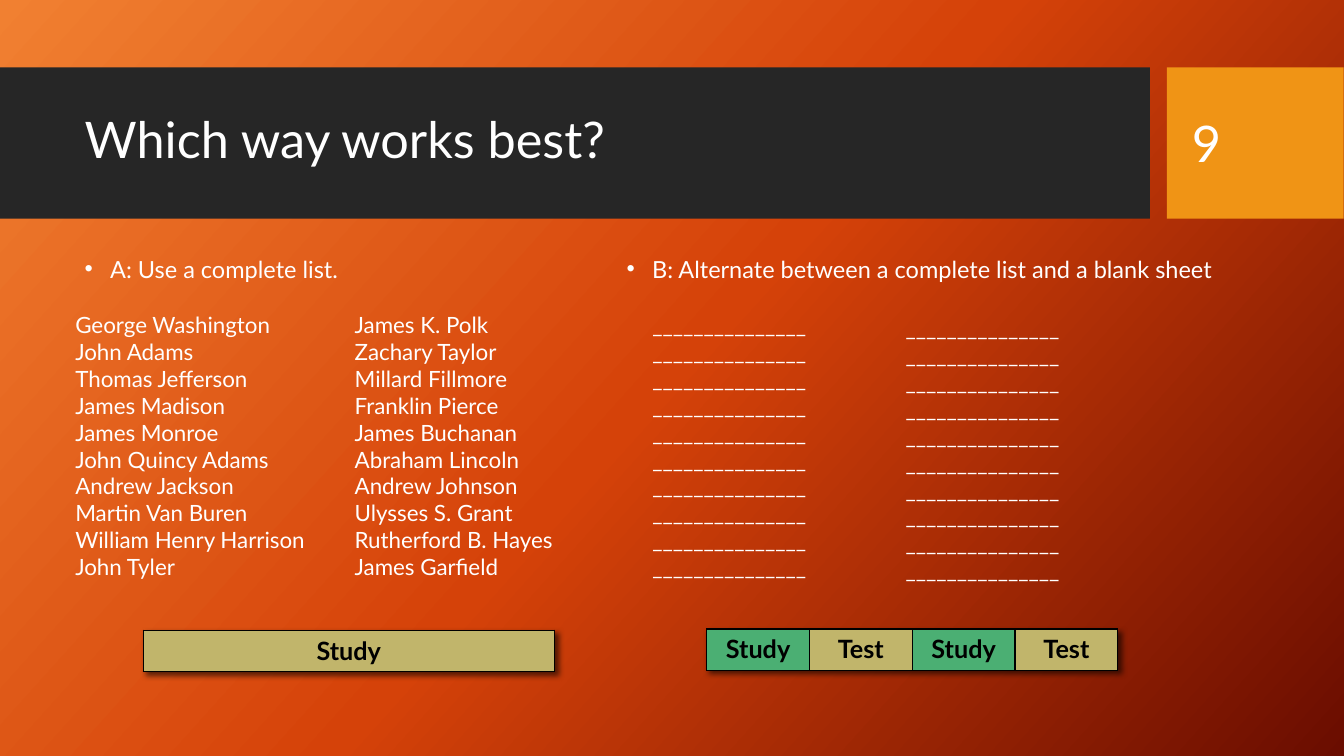
import copy

import pptx
import pptx.dml.color
import pptx.enum.shapes
import pptx.enum.text
import pptx.oxml
import pptx.oxml.ns
import pptx.util
from pptx.util import Cm

COLORS = {
    "text": "FFFFFF", "band": "262626", "number": "F09415", "ink": "000000",
    "study": "4BAF73", "test": "C1B56B",
    "bg_start": "F18031", "bg_middle": "D54209", "bg_end": "6A0D00",
}
NS = 'xmlns:a="http://schemas.openxmlformats.org/drawingml/2006/main"'
ANCHOR = pptx.enum.text.MSO_ANCHOR
AUTO_SIZE = pptx.enum.text.MSO_AUTO_SIZE
ALIGN = pptx.enum.text.PP_ALIGN

EARLY_PRESIDENTS = [
    "George Washington", "John Adams", "Thomas Jefferson", "James Madison",
    "James Monroe", "John Quincy Adams", "Andrew Jackson", "Martin Van Buren",
    "William Henry Harrison", "John Tyler",
]
LATER_PRESIDENTS = [
    "James K. Polk", "Zachary Taylor", "Millard Fillmore", "Franklin Pierce",
    "James Buchanan", "Abraham Lincoln", "Andrew Johnson", "Ulysses S. Grant",
    "Rutherford B. Hayes", "James Garfield",
]
BLANKS = [" " + "_" * 15] * 10


def rgb(name):
    return pptx.dml.color.RGBColor.from_string(COLORS[name])


def xml(text):
    return pptx.oxml.parse_xml(text)


class SlideBuilder:
    font = "Lato"

    def __init__(self, prs):
        self.s = prs.slides.add_slide(prs.slide_layouts[3])

    def background(self, names, angle):
        """Spread the named colours evenly along a clockwise angle."""
        fill = self.s.background.fill
        fill.gradient()
        fill.gradient_angle = 360 - angle
        stops = next(self.s.element.iter(pptx.oxml.ns.qn("a:gsLst")))
        while len(stops) < len(names):
            stops.append(copy.deepcopy(stops[0]))
        for i, (stop, name) in enumerate(zip(fill.gradient_stops, names)):
            stop.color.rgb = rgb(name)
            stop.position = i / (len(names) - 1)

    def place(self, sp, left, top, width, height):
        sp.left, sp.top = Cm(left), Cm(top)
        sp.width, sp.height = Cm(width), Cm(height)

    def run(self, p, text, size, color="text", bold=False):
        r = p.add_run()
        r.text = text
        r.font.name = self.font
        r.font.size = pptx.util.Pt(size)
        r.font.bold = bold
        r.font.color.rgb = rgb(color)

    def bar(self, color, *box):
        sp = self.s.shapes.add_shape(
            pptx.enum.shapes.MSO_SHAPE.RECTANGLE, *map(Cm, box))
        sp.shadow.inherit = False
        sp.fill.solid()
        sp.fill.fore_color.rgb = rgb(color)
        sp.line.fill.background()

    def title(self, text, *box):
        sp = self.s.shapes.title
        self.place(sp, *box)
        tf = sp.text_frame
        tf.auto_size = AUTO_SIZE.NONE
        tf.vertical_anchor = ANCHOR.MIDDLE
        p = tf.paragraphs[0]
        p.alignment = ALIGN.LEFT
        p.line_spacing = 0.9
        self.run(p, text, 36)

    def bullet(self, index, text, *box):
        sp = self.s.placeholders[index]
        self.place(sp, *box)
        tf = sp.text_frame
        tf.auto_size = AUTO_SIZE.NONE
        p = tf.paragraphs[0]
        pPr = p._p.get_or_add_pPr()
        pPr.set("marL", str(Cm(0.64)))
        pPr.set("indent", str(Cm(-0.64)))
        pPr.append(xml(f'<a:buFont {NS} typeface="Arial"/>'))
        pPr.append(xml(f'<a:buChar {NS} char="•"/>'))
        p.line_spacing = 0.7
        p.space_before = pptx.util.Pt(0)
        self.run(p, text, 16.8)

    def text(self, lines, size, *box, anchor=ANCHOR.TOP,
             auto_size=AUTO_SIZE.SHAPE_TO_FIT_TEXT):
        tf = self.s.shapes.add_textbox(*map(Cm, box)).text_frame
        tf.word_wrap = True
        tf.auto_size = auto_size
        tf.vertical_anchor = anchor
        for i, line in enumerate(lines):
            p = tf.add_paragraph() if i else tf.paragraphs[0]
            self.run(p, line, size)

    def table(self, cells, *box):
        """Draw one row of (label, colour) cells with equal widths."""
        table = self.s.shapes.add_table(1, len(cells), *map(Cm, box)).table
        table.first_row = table.horz_banding = False
        table._tbl.tblPr.insert(0, xml(
            f'<a:effectLst {NS}><a:outerShdw blurRad="50800" dist="38100" '
            'dir="2700000" algn="tl" rotWithShape="0"><a:srgbClr val="000000">'
            '<a:alpha val="60000"/></a:srgbClr></a:outerShdw></a:effectLst>'))
        for cell, (label, color) in zip(table.rows[0].cells, cells):
            p = cell.text_frame.paragraphs[0]
            p.alignment = ALIGN.CENTER
            self.run(p, label, 18, "ink", bold=True)
            cell.fill.solid()
            cell.fill.fore_color.rgb = rgb(color)
            tcPr = cell._tc.get_or_add_tcPr()
            for i, side in enumerate(("lnL", "lnR", "lnT", "lnB")):
                tcPr.insert(i, xml(
                    f'<a:{side} {NS} w="12700"><a:solidFill><a:srgbClr '
                    f'val="{COLORS["ink"]}"/></a:solidFill></a:{side}>'))


def main():
    prs = pptx.Presentation()
    prs.slide_width, prs.slide_height = Cm(33.87), Cm(19.05)
    b = SlideBuilder(prs)
    b.background(["bg_start", "bg_middle", "bg_end"], 42)
    b.bar("band", 0, 1.7, 28.98, 3.81)
    b.bar("number", 29.41, 1.7, 4.45, 3.81)
    # The title and lists belong in front of the bars.
    tree = b.s.shapes._spTree
    for ph in list(b.s.placeholders):
        tree.append(ph.element)

    b.title("Which way works best?", 1.88, 2.08, 26.7, 3)
    b.bullet(1, "A: Use a complete list.", 1.88, 6.5, 13.06, 1.32)
    b.bullet(2, "B: Alternate between a complete list and a blank sheet",
             15.54, 6.5, 16.23, 1.32)

    for lines, left, top, width in [
        (EARLY_PRESIDENTS, 1.65, 7.72, 6.4),
        (LATER_PRESIDENTS, 8.69, 7.72, 5.66),
        (BLANKS, 16.05, 7.72, 5.66),
        (BLANKS, 22.43, 7.8, 7.77),
    ]:
        b.text(lines, 16, left, top, width, 7.09)

    b.table([("Study", "study"), ("Test", "test")] * 2,
            17.81, 15.85, 10.36, 1.04)
    b.table([("Study", "test")], 3.61, 15.88, 10.36, 1.04)
    b.text(["9"], 36, 29.79, 2.08, 3.2, 3.02,
           anchor=ANCHOR.MIDDLE, auto_size=AUTO_SIZE.NONE)
    prs.save("out.pptx")


if __name__ == "__main__":
    main()
